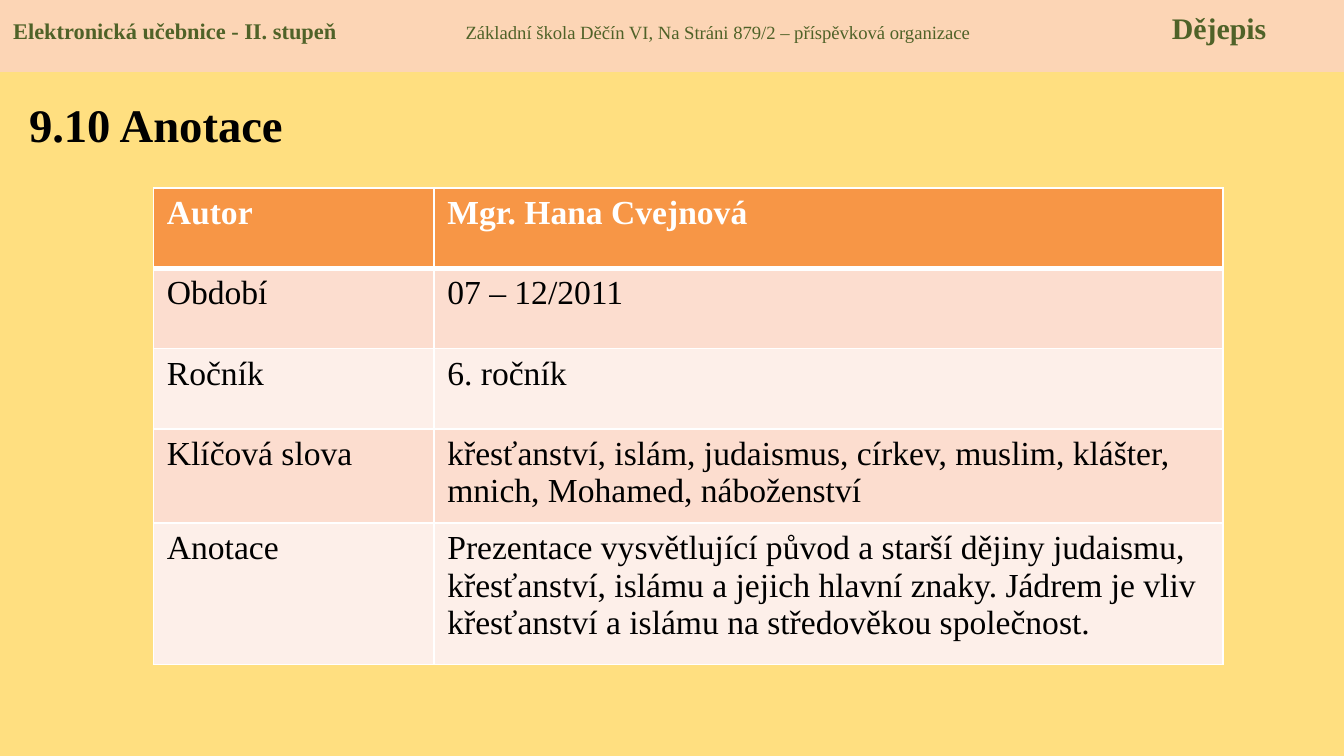
from dataclasses import dataclass

from lxml import etree
from pptx import Presentation
from pptx.dml.color import RGBColor as RGB
from pptx.enum.shapes import MSO_SHAPE as Shape
from pptx.enum.text import MSO_ANCHOR as Anchor
from pptx.oxml.ns import qn
from pptx.util import Cm, Pt


@dataclass(frozen=True)
class Theme:
    font: str = "Times New Roman"
    background: str = "FFDF80"
    band: str = "FCD5B5"
    band_text: str = "4F6228"
    text: str = "000000"
    white: str = "FFFFFF"
    table_head: str = "F79646"
    row_fills: tuple = ("FCDDCF", "FDEFE9")
    series_size: int = 12
    school_size: int = 10
    subject_size: int = 16
    title_size: int = 25
    table_size: int = 18


THEME = Theme()

ANNOTATION = [
    ("Autor", "Mgr. Hana Cvejnová"),
    ("Období", "07 – 12/2011"),
    ("Ročník", "6. ročník"),
    ("Klíčová slova", "křesťanství, islám, judaismus, církev, muslim, klášter, "
                      "mnich, Mohamed, náboženství"),
    ("Anotace", "Prezentace vysvětlující původ a starší dějiny judaismu, "
                "křesťanství, islámu a jejich hlavní znaky. Jádrem je vliv "
                "křesťanství a islámu na středověkou společnost."),
]
COLUMN_WIDTHS = (5.3, 14.91)
ROW_HEIGHTS = (1.52, 1.52, 1.52, 1.78, 2.67)


def style(font, size, color, bold=False):
    font.name = THEME.font
    font.size = Pt(size)
    font.bold = bold
    font.color.rgb = RGB.from_string(color)


def add_tabs(paragraph, positions):
    tabs = etree.SubElement(paragraph._p.get_or_add_pPr(), qn("a:tabLst"))
    for position in positions:
        etree.SubElement(tabs, qn("a:tab"), pos=str(Cm(position)), algn="l")


def set_borders(cell, top, bottom):
    """Draw white cell edges; widths are in points."""
    properties = cell._tc.get_or_add_tcPr()
    edges = (("L", 1), ("R", 1), ("T", top), ("B", bottom))
    for index, (side, width) in enumerate(edges):
        line = etree.Element(qn(f"a:ln{side}"), w=str(Pt(width)))
        fill = etree.SubElement(line, qn("a:solidFill"))
        etree.SubElement(fill, qn("a:srgbClr"), val=THEME.white)
        properties.insert(index, line)


def add_header(slide, left, top, width, height):
    band = slide.shapes.add_shape(
        Shape.RECTANGLE, Cm(left), Cm(top), Cm(width), Cm(height))
    band.shadow.inherit = False
    band.fill.solid()
    band.fill.fore_color.rgb = RGB.from_string(THEME.band)
    band.line.fill.background()

    frame = band.text_frame
    frame.word_wrap = True
    frame.vertical_anchor = Anchor.TOP
    frame.margin_top = Cm(0.18)
    line = frame.paragraphs[0]
    line.alignment = 1  # left
    add_tabs(line, (8.55, 21.9))
    parts = (
        ("Elektronická učebnice - II. stupeň", THEME.series_size, True),
        ("\tZákladní škola Děčín VI, Na Stráni 879/2 – příspěvková organizace",
         THEME.school_size, False),
        ("\tDějepis", THEME.subject_size, True),
    )
    for text, size, bold in parts:
        run = line.add_run()
        run.text = text
        style(run.font, size, THEME.band_text, bold)


def add_title(slide, left, top, width, height):
    title = slide.shapes.add_textbox(Cm(left), Cm(top), Cm(width), Cm(height))
    frame = title.text_frame
    frame.word_wrap = True
    frame.margin_top = Cm(0.24)
    heading = frame.paragraphs[0]
    heading.text = "9.10 Anotace"
    style(heading.font, THEME.title_size, THEME.text, True)


def add_annotation_table(slide, left, top, width, height):
    table = slide.shapes.add_table(
        len(ANNOTATION), len(COLUMN_WIDTHS),
        Cm(left), Cm(top), Cm(width), Cm(height)).table
    table.horz_banding = False
    for column, share in zip(table.columns, COLUMN_WIDTHS):
        column.width = Cm(width * share / sum(COLUMN_WIDTHS))
    for row, share in zip(table.rows, ROW_HEIGHTS):
        row.height = Cm(height * share / sum(ROW_HEIGHTS))

    for r, entries in enumerate(ANNOTATION):
        is_head = r == 0
        fill = THEME.table_head if is_head else THEME.row_fills[(r - 1) % 2]
        for c, text in enumerate(entries):
            cell = table.cell(r, c)
            cell.fill.solid()
            cell.fill.fore_color.rgb = RGB.from_string(fill)
            set_borders(cell, top=3 if r == 1 else 1, bottom=3 if is_head else 1)
            entry = cell.text_frame.paragraphs[0]
            entry.text = text
            style(entry.font, THEME.table_size,
                  THEME.white if is_head else THEME.text, is_head)


def main():
    deck = Presentation()
    deck.slide_width, deck.slide_height = Cm(25.4), Cm(14.29)
    slide = deck.slides.add_slide(deck.slide_layouts[6])
    slide.background.fill.solid()
    slide.background.fill.fore_color.rgb = RGB.from_string(THEME.background)

    # Header band, heading, annotation table
    add_header(slide, 0, 0, 25.4, 1.36)
    add_annotation_table(slide, 2.9, 3.55, sum(COLUMN_WIDTHS), sum(ROW_HEIGHTS))
    add_title(slide, 0.3, 1.57, 9.2, 1.65)

    deck.save("out.pptx")


if __name__ == "__main__":
    main()
